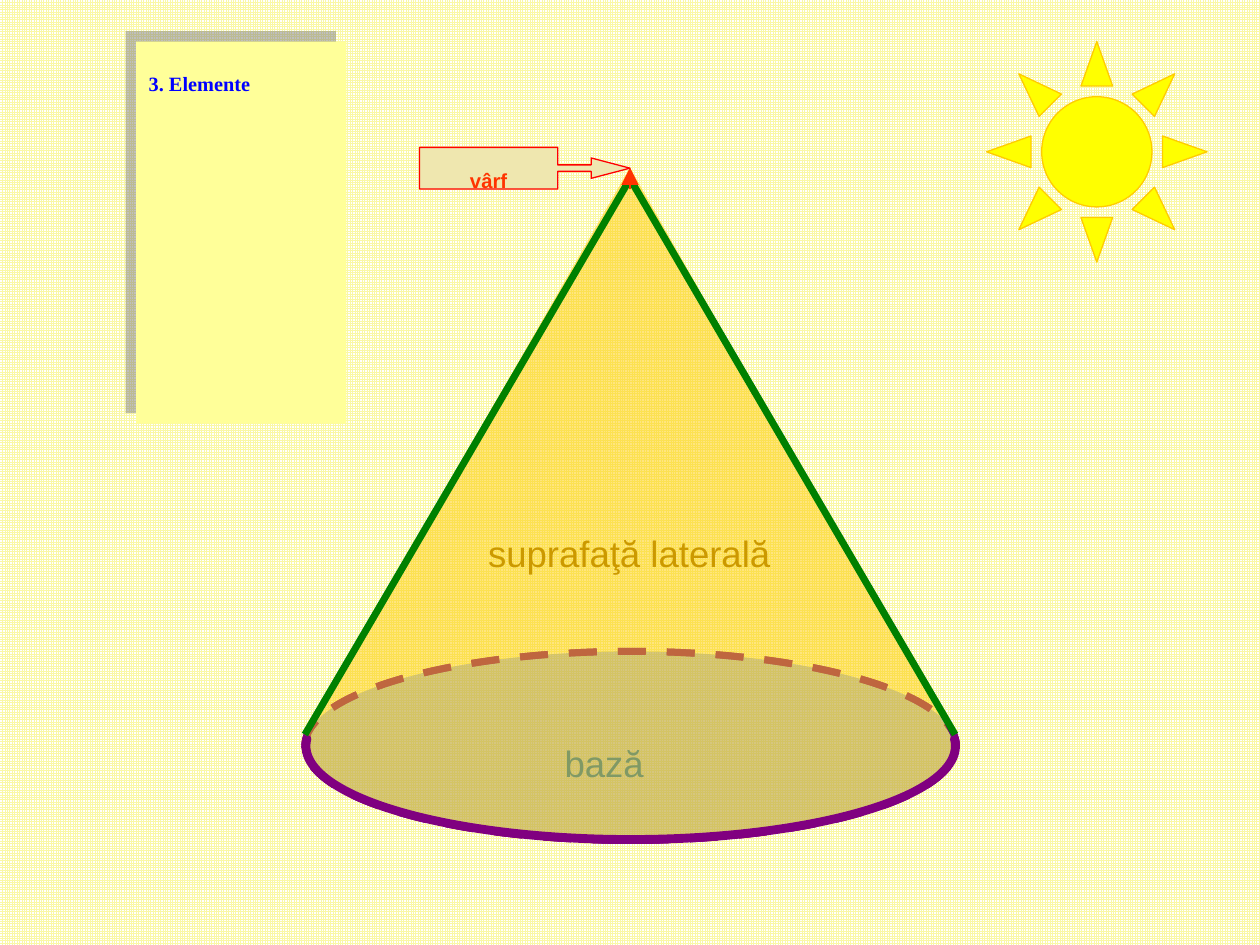
import pptx
import pptx.dml.color
import pptx.enum.dml
import pptx.enum.shapes
import pptx.enum.text
import pptx.oxml
import pptx.util

Inches, Pt = pptx.util.Inches, pptx.util.Pt
SHAPE = pptx.enum.shapes.MSO_SHAPE
ALIGN = pptx.enum.text.PP_ALIGN
ANCHOR = pptx.enum.text.MSO_ANCHOR
FIT = pptx.enum.text.MSO_AUTO_SIZE
DASH = pptx.enum.dml.MSO_LINE.DASH
NS = 'xmlns:a="http://schemas.openxmlformats.org/drawingml/2006/main"'
rgb = pptx.dml.color.RGBColor.from_string


def style(s, fill=None, line=None, width=0.75, alpha=None):
    """Set fill, opacity in percent and line, and drop the theme shadow."""
    s.shadow.inherit = False
    if fill:
        s.fill.solid()
        s.fill.fore_color.rgb = rgb(fill)
        if alpha:
            s.fill._xPr.solidFill[0].append(
                pptx.oxml.parse_xml(f'<a:alpha {NS} val="{alpha * 1000}"/>'))
    else:
        s.fill.background()
    if line:
        s.line.color.rgb = rgb(line)
        s.line.width = Pt(width)
    else:
        s.line.fill.background()


def write(s, text, size, font, color, align=ALIGN.CENTER, bold=False):
    """Fill a shape with one lowered run and return the run."""
    s.text_frame.text = text
    p = s.text_frame.paragraphs[0]
    p.alignment = align
    r = p.runs[0]
    r.font.size, r.font.name, r.font.bold = Pt(size), font, bold
    r.font.color.rgb = rgb(color)
    r.font._element.set("baseline", "-25000")
    return r


prs = pptx.Presentation()
prs.slide_width, prs.slide_height = Inches(10), Inches(7.5)
slide = prs.slides.add_slide(prs.slide_layouts[5])
shapes = slide.shapes

paper = slide.background.fill
paper.patterned()
paper.pattern = pptx.enum.dml.MSO_PATTERN.SMALL_GRID
paper.fore_color.rgb = rgb("FAF8A6")
paper.back_color.rgb = rgb("FFFFFF")

# Heading with its shadow to the upper left
title = shapes.title
title.left, title.top = Inches(1.08), Inches(0.33)
title.width, title.height = Inches(1.67), Inches(0.43)
write(title, "3. Elemente", 20, "Times New Roman", "0000FF", ALIGN.LEFT, True)
title.text_frame.vertical_anchor = ANCHOR.TOP
title.text_frame.auto_size = FIT.SHAPE_TO_FIT_TEXT
style(title, "FFFF99")
title._element.spPr[-1].append(pptx.oxml.parse_xml(
    f'<a:outerShdw {NS} dist="107950" dir="13500000" algn="ctr" rotWithShape="0">'
    '<a:srgbClr val="808080"><a:alpha val="50000"/></a:srgbClr></a:outerShdw>'))

sun = shapes.add_shape(SHAPE.SUN, Inches(7.83), Inches(0.33), Inches(1.75), Inches(1.75))
sun.adjustments[0] = 0.25
style(sun, "FFFF00", "FFCC00")

# Base of the cone: dashed outline, then tinted disc
base_box = Inches(2.42), Inches(5.17), Inches(5.17), Inches(1.5)
for fill, alpha in ((None, None), ("3366FF", 40)):
    base = shapes.add_shape(SHAPE.OVAL, *base_box)
    style(base, fill, "800080", 4, alpha)
    base.line.dash_style = DASH

base_label = shapes.add_textbox(Inches(4.17), Inches(5.5), Inches(1.25), Inches(0.67))
base_label.text_frame.word_wrap = False
r = write(base_label, "bază", 36, "Arial", "0066CC")
r.font._element.insert(0, pptx.oxml.parse_xml(
    f'<a:ln {NS} w="25400"><a:solidFill><a:srgbClr val="800080"/></a:solidFill></a:ln>'))

# Lateral surface
outline = [(5, 1.33), (2.42, 5.83), (2.42, 6), (2.67, 6.25), (3.17, 6.42),
           (3.83, 6.58), (4.67, 6.67), (5.42, 6.67), (6.17, 6.58), (6.92, 6.42),
           (7.33, 6.25), (7.5, 6.08), (7.58, 5.92), (7.5, 5.75)]
points = [(Inches(x), Inches(y)) for x, y in outline]
builder = shapes.build_freeform(*points[0])
builder.add_line_segments(points[1:], close=True)
style(builder.convert_to_shape(), "FFCC00", alpha=50)

side_label = shapes.add_textbox(Inches(3.08), Inches(3.83), Inches(3.83), Inches(1.5))
side_label.text_frame.word_wrap = False
r = write(side_label, "suprafaţă laterală", 36, "Arial", "CC9900")
r.font.fill.gradient()
r.font.fill.gradient_angle = 270
for stop, color in zip(r.font.fill.gradient_stops, ("CC9900", "800000")):
    stop.color.rgb = rgb(color)
r.font._element.insert(0, pptx.oxml.parse_xml(
    f'<a:ln {NS} w="6350"><a:solidFill><a:srgbClr val="CCFFCC"/></a:solidFill></a:ln>'))

# Visible front edge of the base; angles are in 60000ths of a degree
front = shapes.add_shape(SHAPE.BLOCK_ARC, *base_box)
front.rotation = 180
for i, value in enumerate((178.7 * 0.6, 1.3 * 0.6, 0.01)):
    front.adjustments[i] = value
style(front, "800080", "800080", 4)

# Two generators and the arrowhead that marks the apex
for x1, y1, x2, y2, color, width in ((5, 1.42, 7.58, 5.83, "008000", 4),
                                     (5, 1.42, 2.42, 5.83, "008000", 4),
                                     (5, 1.5, 5, 1.33, "FF3300", 0.75)):
    edge = shapes.add_connector(pptx.enum.shapes.MSO_CONNECTOR.STRAIGHT,
                                Inches(x1), Inches(y1), Inches(x2), Inches(y2))
    edge.line.color.rgb = rgb(color)
    edge.line.width = Pt(width)
    edge._element.spPr.append(pptx.oxml.parse_xml(f"<a:effectLst {NS}/>"))
edge.line._ln.append(pptx.oxml.parse_xml(
    f'<a:tailEnd {NS} type="triangle" w="lg" len="lg"/>'))

apex = shapes.add_shape(SHAPE.RIGHT_ARROW_CALLOUT,
                        Inches(3.33), Inches(1.17), Inches(1.67), Inches(0.33))
for i, value in enumerate((0.156, 0.245, 0.932, 0.657)):
    apex.adjustments[i] = value
style(apex, "EFE7AF", "FF0000")
write(apex, "vârf", 20, "Arial", "FF3300", bold=True)
apex.text_frame.word_wrap = False
apex.text_frame.vertical_anchor = ANCHOR.MIDDLE

prs.save("out.pptx")
